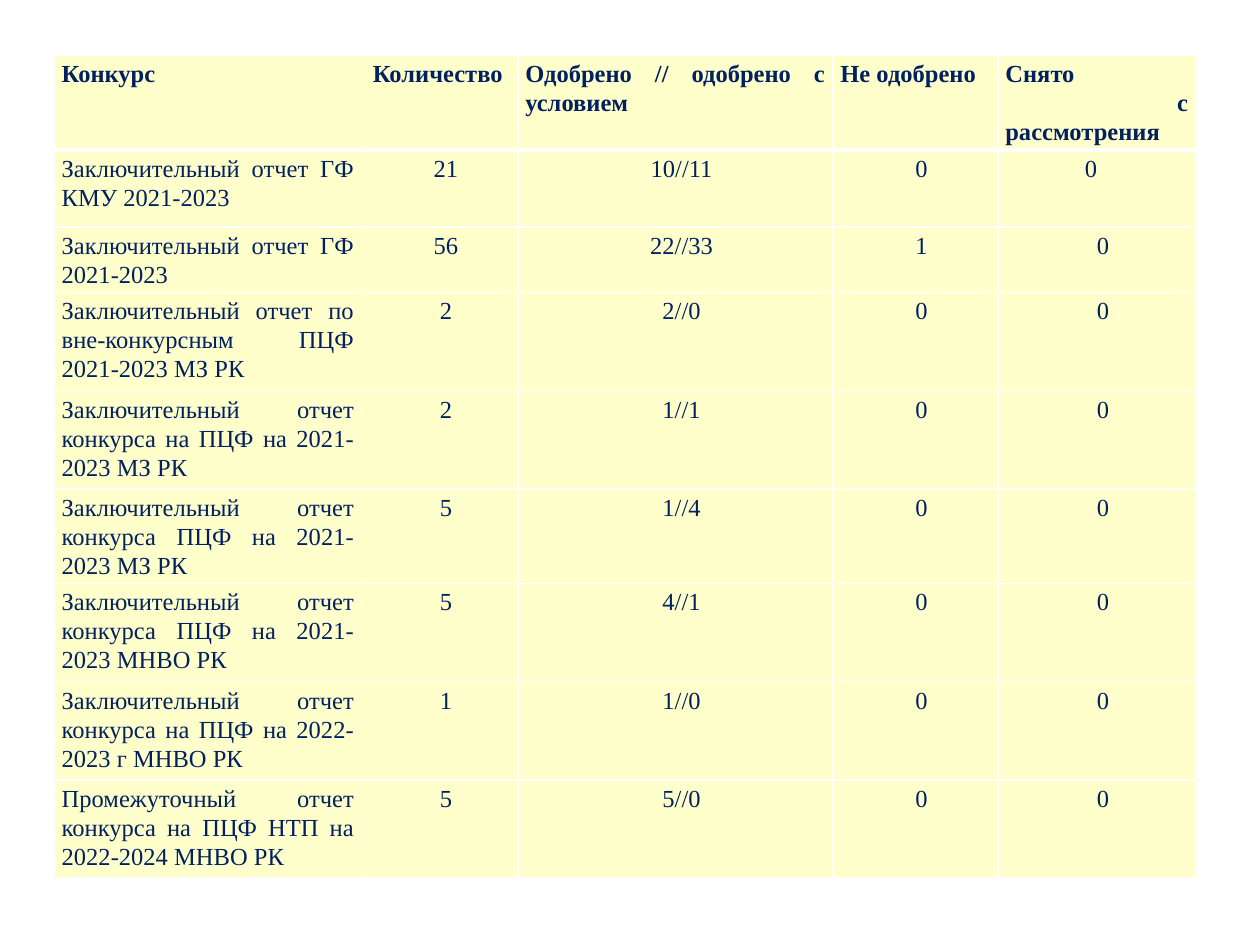
"""Build a slide with a table of report review results by competition."""
import pptx
import pptx.dml.color
import pptx.enum.text
import pptx.oxml
import pptx.oxml.ns
import pptx.util

Inches, Pt = pptx.util.Inches, pptx.util.Pt
RGBColor = pptx.dml.color.RGBColor
ALIGN = pptx.enum.text.PP_ALIGN

NAVY = RGBColor(0x00, 0x20, 0x60)
CREAM = RGBColor(0xFF, 0xFF, 0xCC)
WHITE = RGBColor(0xFF, 0xFF, 0xFF)

HEADER = ["Конкурс", "Количество", "Одобрено // одобрено с условием",
          "Не одобрено", "Снято\nс\nрассмотрения"]
REPORTS = [
    ("Заключительный отчет ГФ КМУ 2021-2023", "21", "10//11", "0", "0"),
    ("Заключительный отчет ГФ 2021-2023", "56", "22//33", "1", "0"),
    ("Заключительный отчет по вне-конкурсным ПЦФ 2021-2023 МЗ РК", "2", "2//0", "0", "0"),
    ("Заключительный отчет конкурса на ПЦФ на 2021-2023 МЗ РК", "2", "1//1", "0", "0"),
    ("Заключительный отчет конкурса ПЦФ на 2021-2023 МЗ РК", "5", "1//4", "0", "0"),
    ("Заключительный отчет конкурса ПЦФ на 2021-2023 МНВО РК", "5", "4//1", "0", "0"),
    ("Заключительный отчет конкурса на ПЦФ на 2022-2023 г МНВО РК", "1", "1//0", "0", "0"),
    ("Промежуточный отчет конкурса на ПЦФ НТП на 2022-2024 МНВО РК", "5", "5//0", "0", "0"),
]
COL_WIDTHS = [2.44, 1.24, 2.5, 1.31, 1.57]
ROW_HEIGHTS = [0.61, 0.61, 0.43, 0.78, 0.78, 0.61, 0.78, 0.78, 0.78]


def set_borders(cell, row):
    tcPr = cell._tc.get_or_add_tcPr()
    widths = {"L": 1, "R": 1, "T": 3 if row == 1 else 1, "B": 3 if row == 0 else 1}
    for side, width in widths.items():
        tcPr.append(pptx.oxml.parse_xml(
            f'<a:ln{side} {pptx.oxml.ns.nsdecls("a")} w="{Pt(width)}">'
            f'<a:solidFill><a:srgbClr val="{WHITE}"/></a:solidFill></a:ln{side}>'))


def fill_cell(cell, text, row, col):
    set_borders(cell, row)
    cell.fill.solid()
    cell.fill.fore_color.rgb = CREAM
    cell.margin_left = cell.margin_right = Inches(0.06)
    cell.margin_top = cell.margin_bottom = Inches(0.03)
    cell.text = text
    centred = row > 0 and col > 0
    for p in cell.text_frame.paragraphs:
        p.alignment = ALIGN.CENTER if centred else ALIGN.JUSTIFY
        p.line_spacing = 1.07
        if centred:
            p._p.get_or_add_pPr().set("marL", str(Inches(0.1)))
        p.font.name = "Times New Roman"
        p.font.size = Pt(14)
        p.font.bold = row == 0
        p.font.color.rgb = NAVY


def main():
    prs = pptx.Presentation()
    prs.slide_width, prs.slide_height = Inches(10), Inches(7.5)
    s = prs.slides.add_slide(prs.slide_layouts[6])
    rows = [HEADER, *REPORTS]
    table = s.shapes.add_table(
        len(rows), len(HEADER), Inches(0.43), Inches(0.44),
        Inches(sum(COL_WIDTHS)), Inches(sum(ROW_HEIGHTS))).table
    for column, width in zip(table.columns, COL_WIDTHS):
        column.width = Inches(width)
    for r, (texts, height) in enumerate(zip(rows, ROW_HEIGHTS)):
        table.rows[r].height = Inches(height)
        for c, text in enumerate(texts):
            fill_cell(table.cell(r, c), text, r, c)

    table.cell(0, 0).text_frame.paragraphs[0].space_after = Pt(8)
    table.cell(0, 1).text_frame.paragraphs[0]._p.get_or_add_pPr().set("marL", str(Inches(0.03)))
    table.cell(0, 4).text_frame.paragraphs[1].alignment = ALIGN.RIGHT
    table.cell(1, 4).margin_right = Inches(0.25)
    prs.save("out.pptx")


if __name__ == "__main__":
    main()
